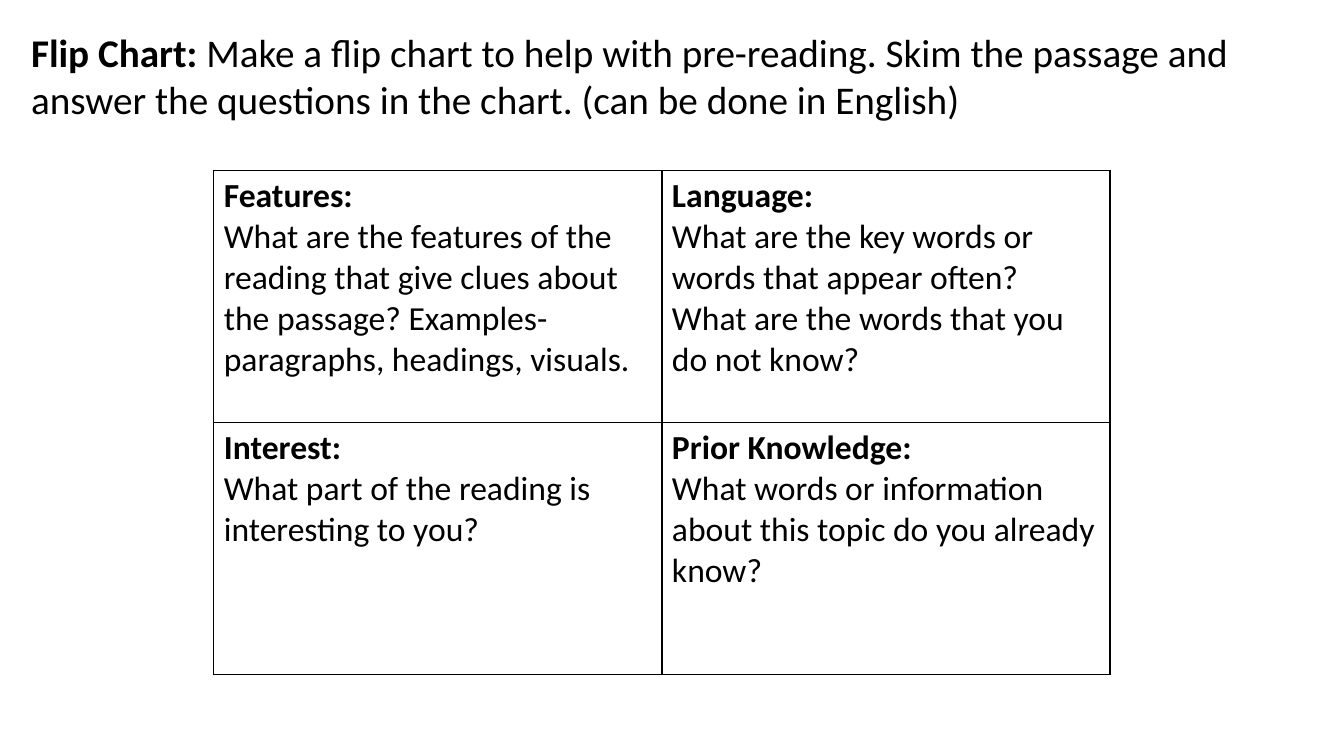
"""Build the flip chart pre-reading slide."""
from lxml import etree
from pptx import Presentation
from pptx.dml.color import RGBColor
from pptx.oxml.ns import qn
from pptx.util import Inches, Pt

HEADING = "Flip Chart: "
INSTRUCTION = (
    "Make a flip chart to help with pre-reading. Skim the passage and "
    "answer the questions in the chart. (can be done in English)"
)
QUADRANTS = [
    [
        ("Features:", "What are the features of the reading that give clues about "
         "the passage? Examples- paragraphs, headings, visuals."),
        ("Language:", "What are the key words or words that appear often?",
         "What are the words that you do not know?"),
    ],
    [
        ("Interest:", "What part of the reading is interesting to you?"),
        ("Prior Knowledge:", "What words or information about this topic do you already know?"),
    ],
]
COLORS = {"ink": "000000", "paper": "FFFFFF"}
FONT = "Calibri"
CHART_LEFT, CHART_TOP, CHART_WIDTH, CHART_HEIGHT = 2.12, 1.69, 8.89, 5
BORDER_SIDES = ("lnL", "lnR", "lnT", "lnB")


def style_run(run, size, bold):
    run.font.name = FONT
    run.font.size = Pt(size)
    run.font.bold = bold
    run.font.color.rgb = RGBColor.from_string(COLORS["ink"])


def add_borders(cell):
    properties = cell._tc.get_or_add_tcPr()
    for position, side in enumerate(BORDER_SIDES):
        border = etree.Element(qn(f"a:{side}"), w=str(Pt(1)))
        ink = etree.SubElement(border, qn("a:solidFill"))
        etree.SubElement(ink, qn("a:srgbClr"), val=COLORS["ink"])
        properties.insert(position, border)


def fill_quadrant(cell, lines):
    cell.fill.solid()
    cell.fill.fore_color.rgb = RGBColor.from_string(COLORS["paper"])
    add_borders(cell)
    cell.text_frame.text = "\n".join(lines)
    for index, paragraph in enumerate(cell.text_frame.paragraphs):
        style_run(paragraph.runs[0], 24, index == 0)


def add_instruction(slide):
    frame = slide.shapes.add_textbox(
        Inches(0.21), Inches(0.23), Inches(12.7), Inches(1.04)).text_frame
    frame.word_wrap = True
    for wording, bold in ((HEADING, True), (INSTRUCTION, False)):
        run = frame.paragraphs[0].add_run()
        run.text = wording
        style_run(run, 28, bold)


def add_flip_chart(slide):
    flip_chart = slide.shapes.add_table(
        len(QUADRANTS), len(QUADRANTS[0]), Inches(CHART_LEFT), Inches(CHART_TOP),
        Inches(CHART_WIDTH), Inches(CHART_HEIGHT)).table
    flip_chart.first_row = False
    flip_chart.horz_banding = False
    for row, quadrants in enumerate(QUADRANTS):
        for column, lines in enumerate(quadrants):
            fill_quadrant(flip_chart.cell(row, column), lines)


def main():
    presentation = Presentation()
    presentation.slide_width = Inches(13.33)
    presentation.slide_height = Inches(7.5)
    slide = presentation.slides.add_slide(presentation.slide_layouts[6])
    add_instruction(slide)
    add_flip_chart(slide)
    presentation.save("out.pptx")


if __name__ == "__main__":
    main()
